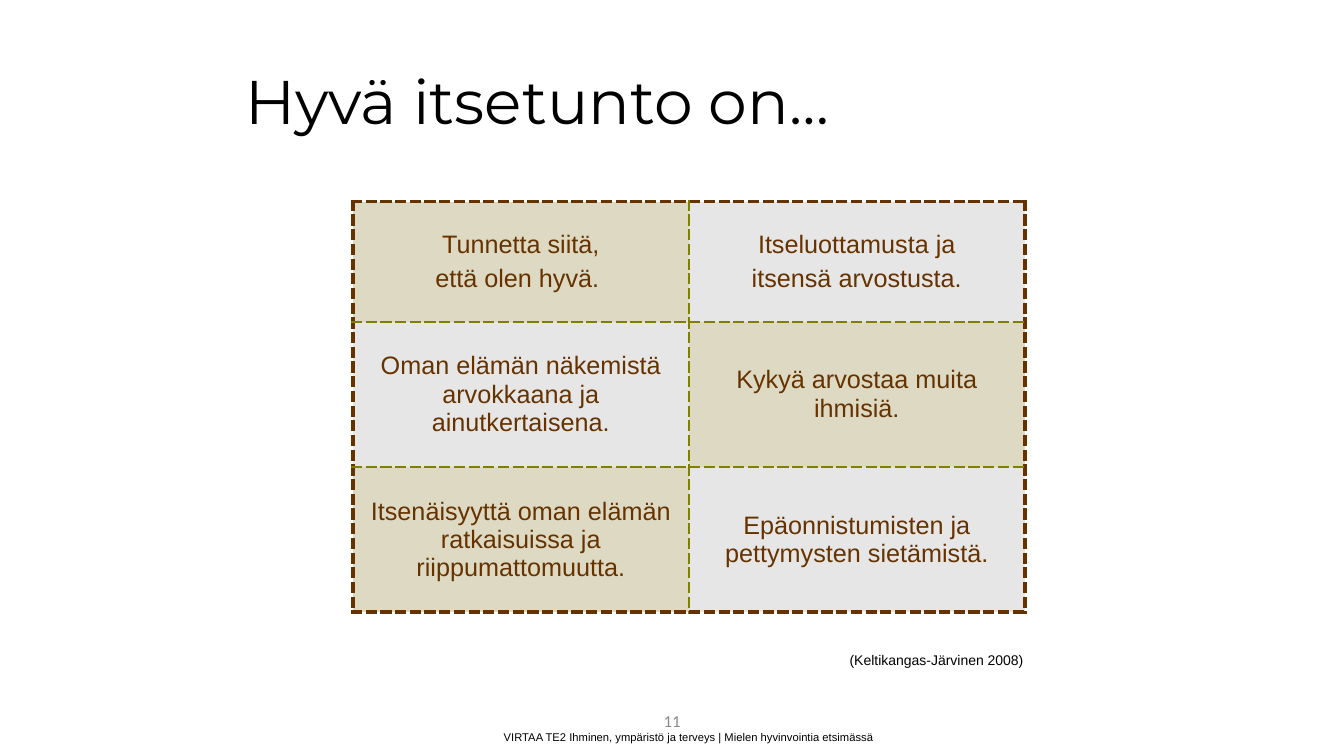
from pptx import Presentation
from pptx.dml.color import RGBColor
from pptx.enum.text import MSO_ANCHOR, PP_ALIGN
from pptx.oxml.ns import qn
from pptx.util import Inches, Pt
from lxml.etree import SubElement

THEME = {
    "black": "000000", "grey": "898989", "brown": "663300", "olive": "808000",
    "sand": "DDD9C3", "silver": "E7E6E6",
    "title": 44, "body": 18, "number": 12, "source": 10, "footer": 8,
    "outer": 3, "inner": 1.5,
}

prs = Presentation()
prs.slide_width = Inches(13.33)
prs.slide_height = Inches(7.5)
COL = prs.slide_width / 160
ROW = prs.slide_height / 90
s = prs.slides.add_slide(prs.slide_layouts[6])


def style(p, size, font, color, align):
    p.alignment = align
    for r in p.runs:
        r.font.size = Pt(THEME[size])
        r.font.name = font
        r.font.color.rgb = RGBColor.from_string(THEME[color])


def add_border(tcPr, side, color, width):
    ln = SubElement(tcPr, qn(f"a:ln{side}"), w=str(Pt(THEME[width])))
    fill = SubElement(ln, qn("a:solidFill"))
    SubElement(fill, qn("a:srgbClr"), val=THEME[color])
    SubElement(ln, qn("a:prstDash"), val="sysDash")


LEFT, CENTER, RIGHT = PP_ALIGN.LEFT, PP_ALIGN.CENTER, PP_ALIGN.RIGHT
MIDDLE, TOP = MSO_ANCHOR.MIDDLE, MSO_ANCHOR.TOP

texts = [
    ("Hyvä itsetunto on…", 28, 5, 108, 15,
     "title", "Montserrat", "black", LEFT, MIDDLE, True),
    ("11", 53, 83.4, 54, 4.8,
     "number", "Calibri", "grey", CENTER, MIDDLE, True),
    ("(Keltikangas-Järvinen 2008)", 99.6, 77, 23.4, 3.2,
     "source", "Arial", "black", RIGHT, TOP, False),
    ("VIRTAA TE2 Ihminen, ympäristö ja terveys | Mielen hyvinvointia etsimässä",
     55, 85.4, 54, 4.8, "footer", "Arial", "black", CENTER, MIDDLE, True),
]
for text, x, y, w, h, size, font, color, align, anchor, wrap in texts:
    sp = s.shapes.add_textbox(int(x * COL), int(y * ROW), int(w * COL), int(h * ROW))
    tf = sp.text_frame
    tf.text = text
    tf.word_wrap = wrap
    tf.vertical_anchor = anchor
    p = tf.paragraphs[0]
    style(p, size, font, color, align)
    if size == "title":
        p.line_spacing = 0.9

qualities = [
    ["Tunnetta siitä,\nettä olen hyvä. ", "Itseluottamusta ja\nitsensä arvostusta."],
    ["Oman elämän näkemistä arvokkaana ja ainutkertaisena.",
     "Kykyä arvostaa muita ihmisiä."],
    ["Itsenäisyyttä oman elämän ratkaisuissa ja riippumattomuutta.",
     "Epäonnistumisten ja pettymysten sietämistä."],
]
heights = [14.3, 17.3, 17.3]
table = s.shapes.add_table(3, 2, int(42 * COL), int(24 * ROW),
                           int(80 * COL), int(sum(heights) * ROW)).table
for column in table.columns:
    column.width = int(40 * COL)

for i, (row, height) in enumerate(zip(qualities, heights)):
    table.rows[i].height = int(height * ROW)
    for j, text in enumerate(row):
        cell = table.cell(i, j)
        tcPr = cell._tc.get_or_add_tcPr()
        edges = {"L": j == 0, "R": j == 1, "T": i == 0, "B": i == 2}
        for side, is_outer in edges.items():
            add_border(tcPr, side, "brown" if is_outer else "olive",
                       "outer" if is_outer else "inner")
        cell.fill.solid()
        cell.fill.fore_color.rgb = RGBColor.from_string(
            THEME["silver" if (i + j) % 2 else "sand"])
        cell.vertical_anchor = MIDDLE
        cell.text_frame.text = text
        for n, p in enumerate(cell.text_frame.paragraphs):
            style(p, "body", "Arial", "brown", CENTER)
            if n:
                p.space_before = Pt(0.2 * THEME["body"])

prs.save("out.pptx")
